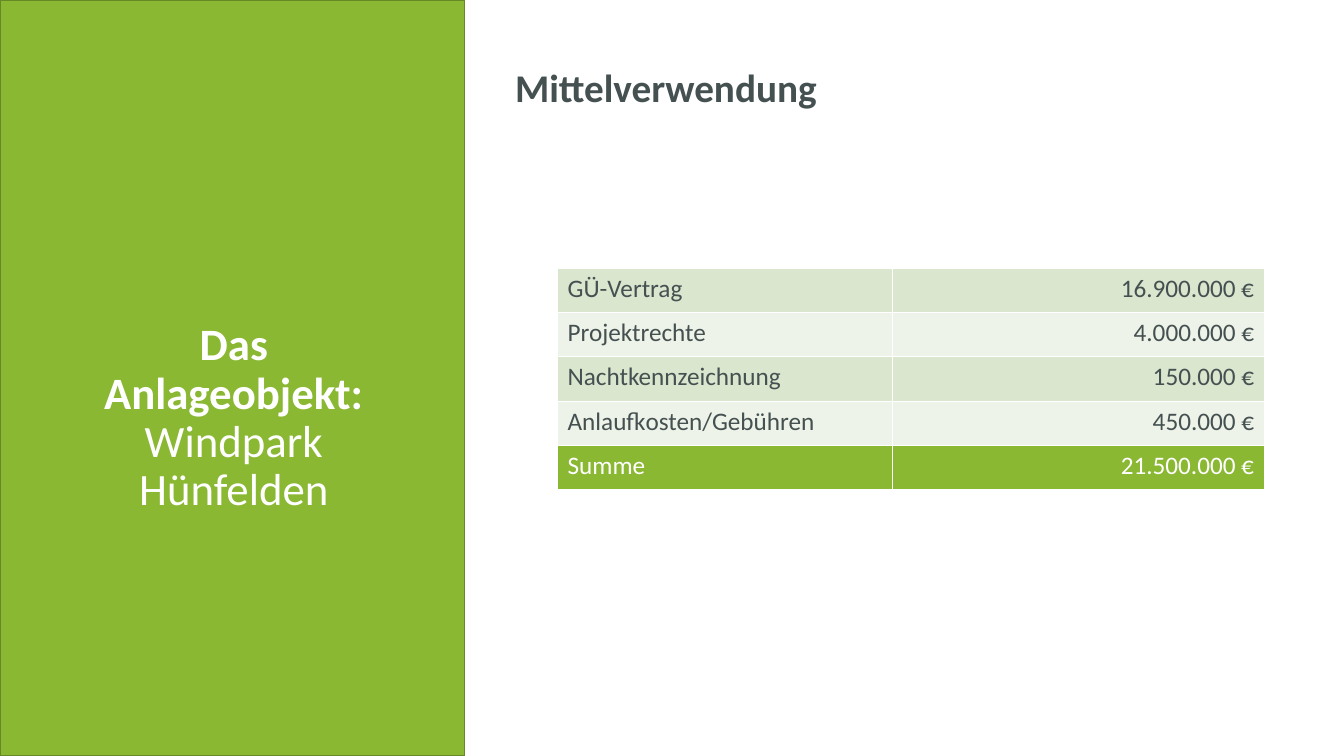
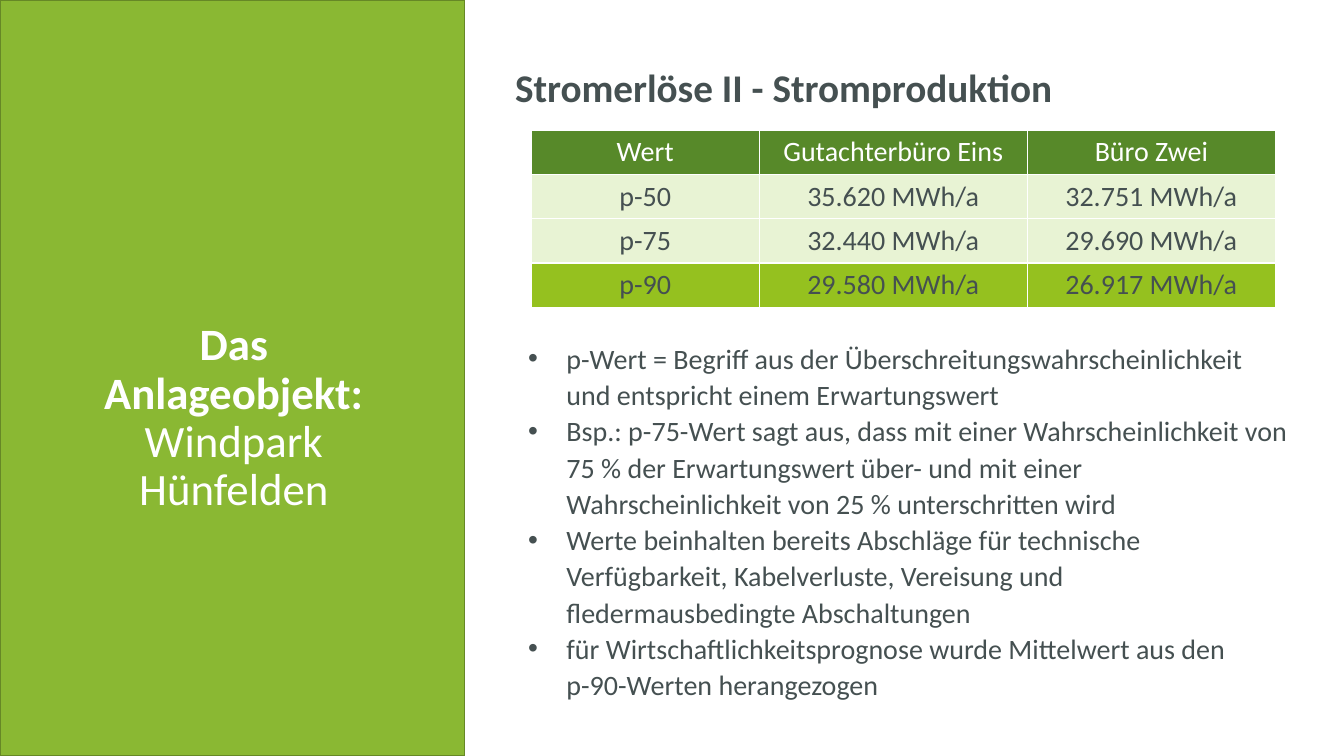
"""Build two slides on the use of funds and the power yield of a wind farm."""
from pptx import Presentation
from pptx import util as u
from pptx.dml.color import RGBColor
from pptx.enum import shapes, text
from pptx.oxml import parse_xml
from pptx.oxml.ns import nsdecls

GREEN = RGBColor(0x8A, 0xB8, 0x33)
EDGE = RGBColor(0x66, 0x88, 0x26)
DARK = RGBColor(0x45, 0x50, 0x51)
WHITE = RGBColor(0xFF, 0xFF, 0xFF)
SAGE = RGBColor(0xDA, 0xE6, 0xCE)
MIST = RGBColor(0xED, 0xF3, 0xE8)
MOSS = RGBColor(0x57, 0x89, 0x29)
PALE = RGBColor(0xE8, 0xF3, 0xD4)
LIME = RGBColor(0x95, 0xC1, 0x1F)
FONT = "Calibri"
LEFT, MID, RIGHT = text.PP_ALIGN.LEFT, text.PP_ALIGN.CENTER, text.PP_ALIGN.RIGHT


def write(para, runs, size, color, align=LEFT):
    para.alignment = align
    for words, bold in runs:
        run = para.add_run()
        run.text = words
        run.font.name = FONT
        run.font.size = u.Pt(size)
        run.font.bold = bold
        run.font.color.rgb = color


def grid(slide, left, top, widths, height, rows, fills, inks, aligns, size):
    frame = slide.shapes.add_table(
        len(rows), len(widths), u.Inches(left), u.Inches(top),
        u.Inches(sum(widths)), u.Inches(height * len(rows)))
    table = frame.table
    table.first_row = table.horz_banding = False
    for col, width in zip(table.columns, widths):
        col.width = u.Inches(width)
    for r, row in enumerate(rows):
        table.rows[r].height = u.Inches(height)
        for c, words in enumerate(row):
            cell = table.cell(r, c)
            props = cell._tc.get_or_add_tcPr()
            for side in "LRTB":
                props.append(parse_xml(
                    f'<a:ln{side} {nsdecls("a")} w="12700"><a:solidFill>'
                    f'<a:srgbClr val="{WHITE}"/></a:solidFill></a:ln{side}>'))
            cell.fill.solid()
            cell.fill.fore_color.rgb = fills[r]
            write(cell.text_frame.paragraphs[0], [(words, False)], size, inks[r], aligns[c])


deck = Presentation()
deck.slide_width, deck.slide_height = u.Inches(13.33), u.Inches(7.5)

slides = []
for title in ("Mittelverwendung", "Stromerlöse II - Stromproduktion"):
    slide = deck.slides.add_slide(deck.slide_layouts[6])
    slides.append(slide)

    band = slide.shapes.add_shape(
        shapes.MSO_SHAPE.RECTANGLE, 0, 0, u.Inches(4.61), deck.slide_height)
    band.shadow.inherit = False
    band.fill.solid()
    band.fill.fore_color.rgb = GREEN
    band.line.color.rgb = EDGE
    band.line.width = u.Pt(1)

    topic = slide.shapes.add_textbox(
        u.Inches(0.57), u.Inches(2.66), u.Inches(3.5), u.Inches(2.99)).text_frame
    topic.word_wrap = True
    topic.vertical_anchor = text.MSO_ANCHOR.MIDDLE
    topic.paragraphs[0].line_spacing = 0.9
    write(topic.paragraphs[0],
          [("Das Anlageobjekt: ", True), ("Windpark Hünfelden", False)], 32, WHITE, MID)

    head = slide.shapes.add_textbox(
        u.Inches(5.01), u.Inches(0.63), u.Inches(7.99), u.Inches(0.52)).text_frame
    head.word_wrap = True
    head.paragraphs[0].line_spacing = 0.9
    head.paragraphs[0].space_before = u.Pt(10)
    write(head.paragraphs[0], [(title, True)], 28, DARK)

funds, power = slides

costs = [
    ("GÜ-Vertrag", "16.900.000 €"),
    ("Projektrechte", "4.000.000 €"),
    ("Nachtkennzeichnung", "150.000 €"),
    ("Anlaufkosten/Gebühren", "450.000 €"),
    ("Summe", "21.500.000 €"),
]
grid(funds, 5.53, 2.66, (3.32, 3.69), 0.44, costs,
     [SAGE, MIST] * 2 + [GREEN], [DARK] * 4 + [WHITE], (LEFT, RIGHT), 18)

yields = [
    ("Wert", "Gutachterbüro Eins", "Büro Zwei"),
    ("p-50", "35.620 MWh/a", "32.751 MWh/a"),
    ("p-75", "32.440 MWh/a", "29.690 MWh/a"),
    ("p-90", "29.580 MWh/a", "26.917 MWh/a"),
]
grid(power, 5.27, 1.29, (2.26, 2.66, 2.46), 0.44, yields,
     [MOSS, PALE, PALE, LIME], [WHITE] + [DARK] * 3, [MID] * 3, 20)

points = [
    "p-Wert = Begriff aus der Überschreitungswahrscheinlichkeit und entspricht "
    "einem Erwartungswert",
    "Bsp.: p-75-Wert sagt aus, dass mit einer Wahrscheinlichkeit von 75 % der "
    "Erwartungswert über- und mit einer Wahrscheinlichkeit von 25 % unterschritten wird",
    "Werte beinhalten bereits Abschläge für technische Verfügbarkeit, Kabelverluste, "
    "Vereisung und fledermausbedingte Abschaltungen",
    "für Wirtschaftlichkeitsprognose wurde Mittelwert aus den p-90-Werten herangezogen",
]
notes = power.shapes.add_textbox(
    u.Inches(5.14), u.Inches(3.31), u.Inches(7.73), u.Inches(3.72)).text_frame
notes.word_wrap = True
for i, point in enumerate(points):
    para = notes.add_paragraph() if i else notes.paragraphs[0]
    para.line_spacing = 1.08
    props = para._p.get_or_add_pPr()
    props.set("marL", str(u.Inches(0.38)))
    props.set("indent", str(-u.Inches(0.38)))
    props.append(parse_xml(f'<a:buFont {nsdecls("a")} typeface="Arial"/>'))
    props.append(parse_xml(f'<a:buChar {nsdecls("a")} char="•"/>'))
    write(para, [(point, False)], 20, DARK)

deck.save("out.pptx")
